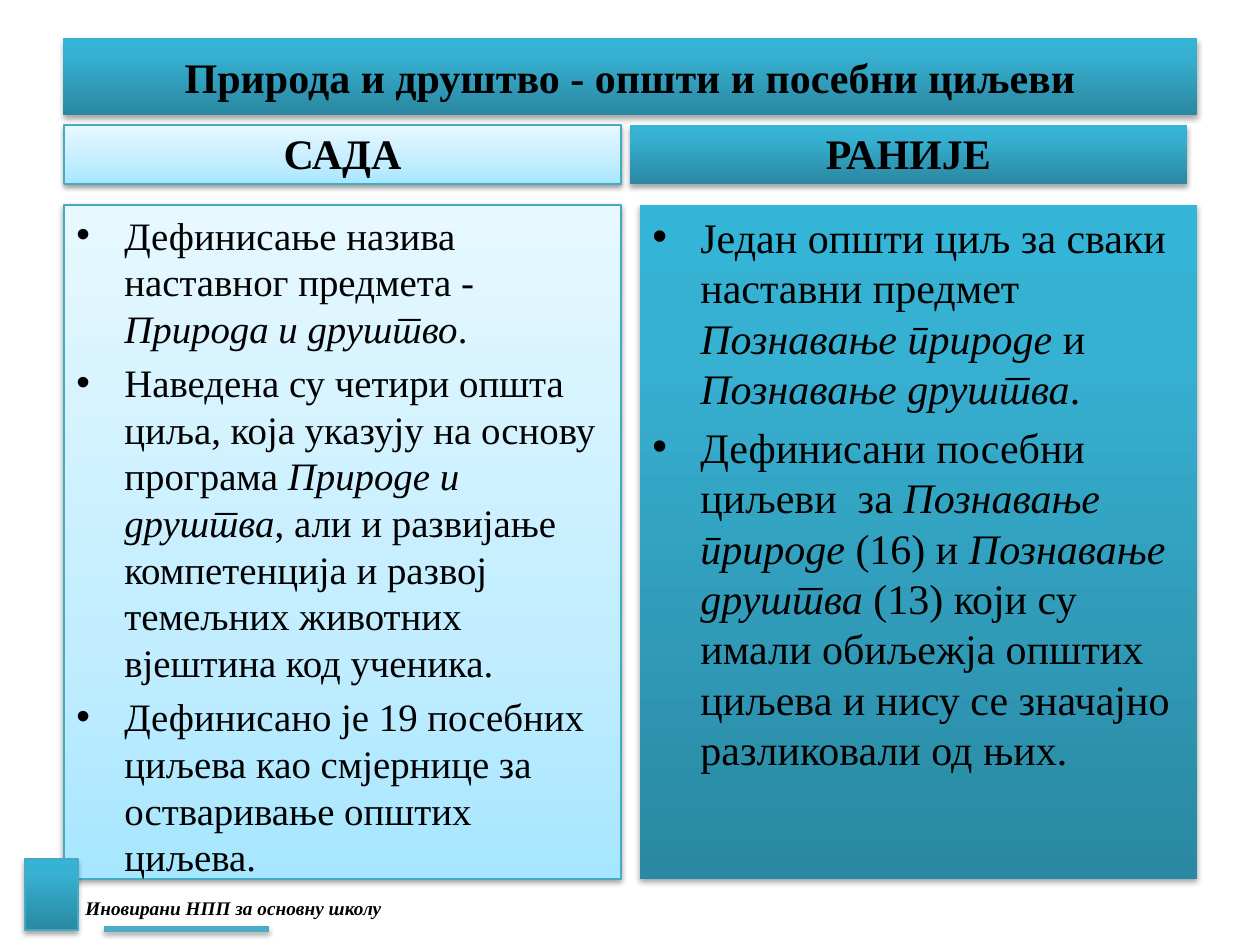
from copy import deepcopy
from dataclasses import dataclass
from typing import NamedTuple

from lxml.etree import SubElement
from pptx import Presentation
from pptx.dml.color import RGBColor
from pptx.enum.shapes import MSO_CONNECTOR, MSO_SHAPE
from pptx.enum.text import MSO_ANCHOR, PP_ALIGN
from pptx.oxml.ns import qn
from pptx.util import Emu, Pt

EMU_PER_PX = 914400 / 126
FONT = "Times New Roman"
LANGUAGE = "sr-Cyrl-RS"
INDENT = 48

BLACK = RGBColor(0x00, 0x00, 0x00)
EDGE = RGBColor(0x46, 0xAA, 0xC5)
ACCENT = RGBColor(0x4B, 0xAC, 0xC6)


class Span(NamedTuple):
    text: str
    italic: bool = False
    bold: bool = False


class Box(NamedTuple):
    left: int
    top: int
    width: int
    height: int


@dataclass(frozen=True)
class Shadow:
    opacity: int
    blur: float
    distance: float


@dataclass(frozen=True)
class Look:
    stops: tuple[tuple[float, RGBColor], ...]
    shadow: Shadow
    outlined: bool


SOFT_SHADOW = Shadow(38, 3.1, 1.6)
DEEP_SHADOW = Shadow(35, 3.1, 1.8)
DEEP_STOPS = (
    (0, RGBColor(0x2A, 0x88, 0xA2)),
    (0.8, RGBColor(0x37, 0xB1, 0xD2)),
    (1, RGBColor(0x34, 0xB4, 0xD6)),
)
PALE_STOPS = (
    (0, RGBColor(0xA7, 0xE6, 0xFF)),
    (0.35, RGBColor(0xC1, 0xED, 0xFF)),
    (1, RGBColor(0xE7, 0xF8, 0xFF)),
)
PALE = Look(PALE_STOPS, SOFT_SHADOW, True)
DEEP = Look(DEEP_STOPS, DEEP_SHADOW, False)
DEEP_OUTLINED = Look(DEEP_STOPS, DEEP_SHADOW, True)


@dataclass(frozen=True)
class Column:
    heading: str
    heading_left: int
    body_left: int
    look: Look
    size: float
    points: tuple[tuple[Span, ...], ...]


COLUMNS = (
    Column("САДА", 64, 64, PALE, 22.2, (
        (
            Span("Дефинисање назива наставног предмета - "),
            Span("Природа и друштво", italic=True),
            Span("."),
        ),
        (
            Span("Наведена су четири општа циља, која указују на основу програма "),
            Span("Природе и друштва", italic=True),
            Span(", али и развијање компетенција и развој темељних животних "
                 "вјештина код ученика."),
        ),
        (
            Span("Дефинисано је 19 посебних циљева као смјернице за "
                 "остваривање општих циљева."),
        ),
    )),
    Column("РАНИЈЕ", 630, 640, DEEP, 24, (
        (
            Span("Један општи циљ за сваки наставни предмет "),
            Span("Познавaње природе ", italic=True),
            Span("и"),
            Span(" Познавање друштва", italic=True),
            Span("."),
        ),
        (
            Span("Дефинисани посебни циљеви  за "),
            Span("Познавање природе ", italic=True),
            Span("(16) и "),
            Span("Познавање друштва ", italic=True),
            Span("(13) који су имали обиљежја општих циљева и нису се "
                 "значајно разликовали од њих."),
        ),
    )),
)


def px(length: int) -> Emu:
    return Emu(round(length * EMU_PER_PX))


def add_shadow(properties, shadow: Shadow) -> None:
    effects = properties.find(qn("a:effectLst"))
    if effects is None:
        effects = SubElement(properties, qn("a:effectLst"))
    outer = SubElement(
        effects, qn("a:outerShdw"),
        blurRad=str(Pt(shadow.blur)), dist=str(Pt(shadow.distance)),
        dir="5400000", rotWithShape="0",
    )
    tint = SubElement(outer, qn("a:srgbClr"), val=str(BLACK))
    SubElement(tint, qn("a:alpha"), val=str(shadow.opacity * 1000))


def add_panel(slide, box: Box, look: Look):
    panel = slide.shapes.add_shape(MSO_SHAPE.RECTANGLE, *map(px, box))
    panel.fill.gradient()
    panel.fill.gradient_angle = 90
    gradient = panel._element.spPr.find(".//" + qn("a:gsLst"))
    gradient.append(deepcopy(gradient[-1]))
    for stop, (position, color) in zip(panel.fill.gradient_stops, look.stops):
        stop.position = position
        stop.color.rgb = color
    if look.outlined:
        panel.line.color.rgb = EDGE
        panel.line.width = Pt(0.75)
    else:
        panel.line.fill.background()
    panel.shadow.inherit = False
    add_shadow(panel._element.spPr, look.shadow)
    return panel


def write_spans(paragraph, spans: tuple[Span, ...], size: float) -> None:
    for span in spans:
        run = paragraph.add_run()
        run.text = span.text
        run.font.name = FONT
        run.font.size = Pt(size)
        run.font.bold = span.bold
        run.font.italic = span.italic
        run.font.color.rgb = BLACK
        run._r.get_or_add_rPr().set("lang", LANGUAGE)


def add_heading(slide, box: Box, look: Look, text: str, anchor: MSO_ANCHOR) -> None:
    frame = add_panel(slide, box, look).text_frame
    frame.word_wrap = True
    frame.vertical_anchor = anchor
    frame.paragraphs[0].alignment = PP_ALIGN.CENTER
    write_spans(frame.paragraphs[0], (Span(text, bold=True),), 24)


def add_points(slide, box: Box, column: Column) -> None:
    frame = add_panel(slide, box, column.look).text_frame
    frame.word_wrap = True
    frame.vertical_anchor = MSO_ANCHOR.TOP
    for index, spans in enumerate(column.points):
        paragraph = frame.add_paragraph() if index else frame.paragraphs[0]
        paragraph.alignment = PP_ALIGN.LEFT
        paragraph.space_before = Pt(round(column.size * 0.2, 1))
        properties = paragraph._p.get_or_add_pPr()
        properties.set("marL", str(px(INDENT)))
        properties.set("indent", str(-px(INDENT)))
        SubElement(properties, qn("a:buFont"), typeface="Arial")
        SubElement(properties, qn("a:buChar"), char="•")
        write_spans(paragraph, spans, column.size)


def add_footer(slide) -> None:
    add_panel(slide, Box(25, 859, 53, 71), DEEP_OUTLINED)
    rule = slide.shapes.add_connector(
        MSO_CONNECTOR.STRAIGHT, px(104), px(929), px(269), px(929))
    rule.line.color.rgb = ACCENT
    rule.line.width = Pt(3)
    add_shadow(rule._element.spPr, DEEP_SHADOW)
    caption = slide.shapes.add_textbox(px(73), px(890), px(338), px(36)).text_frame
    caption.word_wrap = True
    write_spans(
        caption.paragraphs[0],
        (Span("Иновирани НПП за основну школу", italic=True, bold=True),), 11)


def main() -> None:
    deck = Presentation()
    deck.slide_width, deck.slide_height = px(1260), px(945)
    slide = deck.slides.add_slide(deck.slide_layouts[6])
    for column in COLUMNS:
        add_heading(slide, Box(column.heading_left, 125, 557, 59), column.look,
                    column.heading, MSO_ANCHOR.BOTTOM)
        add_points(slide, Box(column.body_left, 205, 557, 674), column)
    add_heading(slide, Box(63, 38, 1134, 77), DEEP,
                "Природа и друштво - општи и посебни циљеви", MSO_ANCHOR.MIDDLE)
    add_footer(slide)
    deck.save("out.pptx")


if __name__ == "__main__":
    main()
